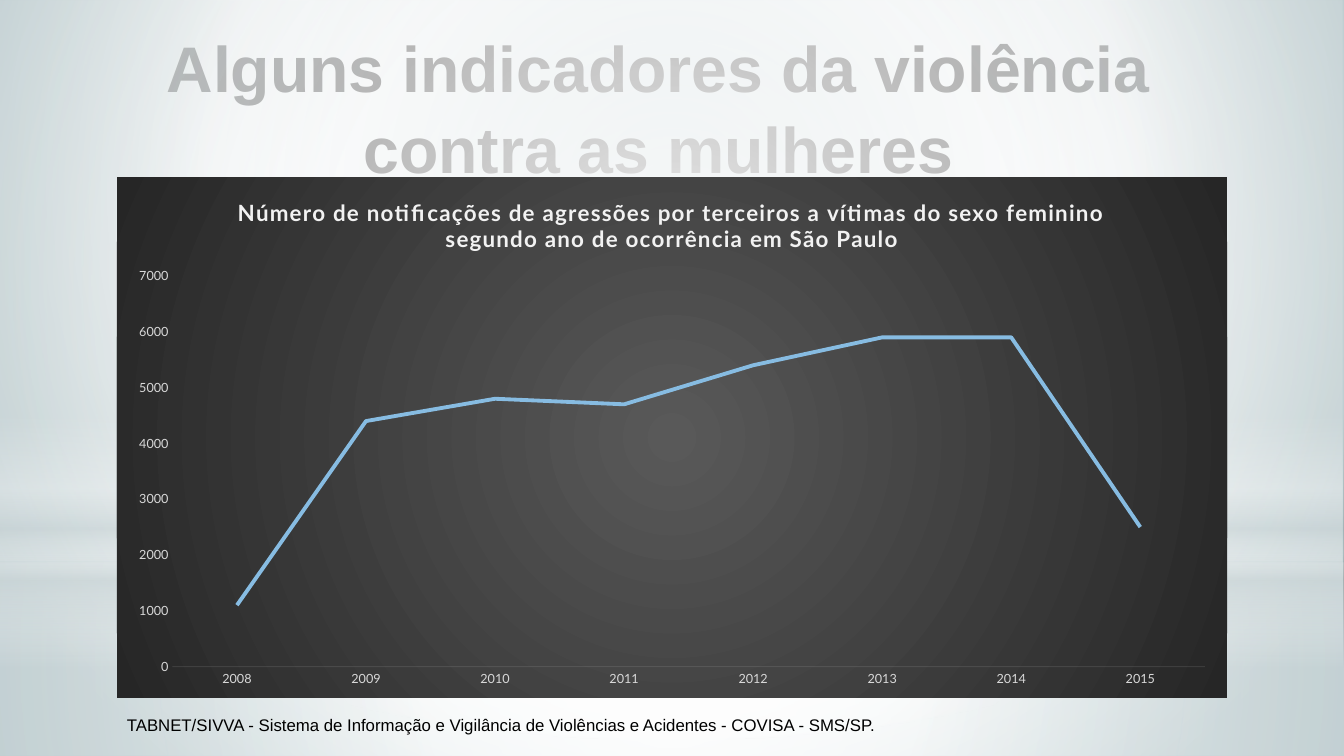
import pptx
import pptx.chart.data
import pptx.dml.color
import pptx.enum.chart
import pptx.enum.shapes
import pptx.enum.text
import pptx.oxml
import pptx.oxml.ns
import pptx.util
from pptx.util import Pt

HEADING = "Alguns indicadores da violência contra as mulheres"
CHART_HEADING = ("Número de notificações de agressões por terceiros a vítimas "
                 "do sexo feminino segundo ano de ocorrência em São Paulo")
CREDIT = ("TABNET/SIVVA - Sistema de Informação e Vigilância de Violências "
          "e Acidentes - COVISA - SMS/SP.")
NOTIFICATIONS = {"2008": 1100, "2009": 4400, "2010": 4800, "2011": 4700,
                 "2012": 5400, "2013": 5900, "2014": 5900, "2015": 2500}

THEME = {
    "heading": ("Arial", 46, "404040"),
    "chart_heading": ("Lato", 16, "F2F2F2"),
    "axis": ("Lato", 9, "D9D9D9"),
    "credit": ("Arial", 12, "000000"),
    "series": "87BCE2",
    "axis_line": "F2F2F2",
}

# Gradients: stops of (position %, colour, opacity %), then either a linear
# angle in degrees or the focus rectangle (left, top, right, bottom %).
CENTRE = (50, 50, 50, 50)
BACKDROP = ([(0, "C2D0D3", 100), (60, "FFFFFF", 100), (100, "9AB5BA", 100)],
            (20, 10, 20, 60))
PANEL = ([(0, "595959", 100), (100, "262626", 100)], CENTRE)

WIDTH, HEIGHT = 960, 540
RECT = pptx.enum.shapes.MSO_SHAPE.RECTANGLE
OVAL = pptx.enum.shapes.MSO_SHAPE.OVAL
# Preset, top, height, stops, direction; every glow spans the slide.
GLOWS = [
    (RECT, 402, 138,
     [(0, "FFFFFF", 91), (37, "FFFFFF", 76), (100, "CDD7D9", 79)], CENTRE),
    (RECT, 0, 402,
     [(0, "FFFFFF", 89), (48, "FFFFFF", 62), (100, "CDD7D9", 79)], CENTRE),
    (RECT, 296.5, 180,
     [(0, "FFFFFF", 0), (29, "FFFFFF", 30), (45, "CDD7D9", 40),
      (55, "FFFFFF", 26), (65, "CDD7D9", 60), (100, "FFFFFF", 0)], 90),
    (OVAL, 126, 402, [(0, "FFFFFF", 100), (56, "FFFFFF", 0)], CENTRE),
]

HEADING_BOX = (75, 13.7, 790.5, 55.5)
CHART_BOX = (83.5, 126.5, 793, 372)
CREDIT_BOX = (83.5, 507, 838, 44)
PLOT_SHARE = {"x": 0.05, "y": 0.19, "w": 0.93, "h": 0.75}


def points(box):
    return [Pt(length) for length in box]


def rgb(colour):
    return pptx.dml.color.RGBColor.from_string(colour)


def style_font(font, role, bold=False):
    font.name, size, colour = THEME[role]
    font.size = Pt(size)
    font.bold = bold
    font.color.rgb = rgb(colour)


def gradient(stops, direction):
    stop_xml = "".join(
        f'<a:gs pos="{position * 1000}"><a:srgbClr val="{colour}">'
        f'<a:alpha val="{opacity * 1000}"/></a:srgbClr></a:gs>'
        for position, colour, opacity in stops)
    if isinstance(direction, tuple):
        sides = " ".join(f'{side}="{share * 1000}"'
                         for side, share in zip("ltrb", direction))
        shade = f'<a:path path="circle"><a:fillToRect {sides}/></a:path>'
    else:
        shade = f'<a:lin ang="{direction * 60000}" scaled="0"/>'
    return pptx.oxml.parse_xml(
        f'<a:gradFill {pptx.oxml.ns.nsdecls("a")} rotWithShape="1">'
        f'<a:gsLst>{stop_xml}</a:gsLst>{shade}</a:gradFill>')


def set_gradient(fill, owner, stops, direction):
    """Put a gradient where the plain fill of the owner element sits."""
    fill.background()
    plain = owner.find(".//" + pptx.oxml.ns.qn("a:noFill"))
    plain.getparent().replace(plain, gradient(stops, direction))


def add_glows(slide):
    set_gradient(slide.background.fill, slide.element, *BACKDROP)
    for preset, top, height, stops, direction in GLOWS:
        glow = slide.shapes.add_shape(
            preset, *points((0, top, WIDTH, height)))
        glow.shadow.inherit = False
        set_gradient(glow.fill, glow.element, stops, direction)
        glow.line.fill.background()


def add_heading(slide):
    heading = slide.shapes.title
    heading.left, heading.top, heading.width, heading.height = points(HEADING_BOX)
    frame = heading.text_frame
    frame.text = HEADING
    frame.word_wrap = True
    frame.auto_size = pptx.enum.text.MSO_AUTO_SIZE.NONE
    frame.vertical_anchor = pptx.enum.text.MSO_ANCHOR.TOP
    paragraph = frame.paragraphs[0]
    paragraph.alignment = pptx.enum.text.PP_ALIGN.CENTER
    paragraph.line_spacing = 1.05
    style_font(paragraph.font, "heading", bold=True)


def add_notifications_chart(slide):
    data = pptx.chart.data.CategoryChartData()
    data.categories = list(NOTIFICATIONS)
    data.add_series("Series 1", list(NOTIFICATIONS.values()))
    chart = slide.shapes.add_chart(
        pptx.enum.chart.XL_CHART_TYPE.LINE, *points(CHART_BOX), data).chart
    chart.has_legend = False
    style_font(chart.font, "axis")

    title = chart.chart_title
    title.text_frame.text = CHART_HEADING
    title.include_in_layout = False
    paragraph = title.text_frame.paragraphs[0]
    style_font(paragraph.font, "chart_heading", bold=True)
    paragraph.font._element.set("spc", "100")

    for axis in (chart.category_axis, chart.value_axis):
        axis.has_major_gridlines = False
        axis.major_tick_mark = pptx.enum.chart.XL_TICK_MARK.NONE
        axis.minor_tick_mark = pptx.enum.chart.XL_TICK_MARK.NONE
        style_font(axis.tick_labels.font, "axis")
    chart.value_axis.minimum_scale = 0
    chart.value_axis.maximum_scale = 7000
    chart.value_axis.major_unit = 1000
    chart.value_axis.format.line.fill.background()
    base = chart.category_axis.format.line
    base.width = Pt(0.75)
    base.color.rgb = rgb(THEME["axis_line"])
    base_colour = chart.category_axis.format.line._ln.find(
        ".//" + pptx.oxml.ns.qn("a:srgbClr"))
    base_colour.append(pptx.oxml.parse_xml(
        f'<a:alpha {pptx.oxml.ns.nsdecls("a")} val="10000"/>'))

    chart.plots[0].vary_by_categories = False
    series = chart.plots[0].series[0]
    series.smooth = False
    series.marker.style = pptx.enum.chart.XL_MARKER_STYLE.NONE
    series.format.line.width = Pt(2.75)
    series.format.line.color.rgb = rgb(THEME["series"])

    namespaces = pptx.oxml.ns.nsdecls("c", "a")
    panel = pptx.oxml.parse_xml(
        f"<c:spPr {namespaces}><a:ln><a:noFill/></a:ln></c:spPr>")
    panel.insert(0, gradient(*PANEL))
    chart_body = chart.element.find(pptx.oxml.ns.qn("c:chart"))
    chart_body.addnext(panel)

    shares = "".join(f'<c:{key} val="{share}"/>'
                     for key, share in PLOT_SHARE.items())
    layout = pptx.oxml.parse_xml(
        f'<c:layout {namespaces}><c:manualLayout>'
        '<c:layoutTarget val="inner"/><c:xMode val="edge"/>'
        f'<c:yMode val="edge"/>{shares}</c:manualLayout></c:layout>')
    plot_area = chart_body.find(pptx.oxml.ns.qn("c:plotArea"))
    for automatic in plot_area.findall(pptx.oxml.ns.qn("c:layout")):
        plot_area.remove(automatic)
    plot_area.insert(0, layout)


def add_credit(slide):
    frame = slide.shapes.add_textbox(*points(CREDIT_BOX)).text_frame
    frame.text = CREDIT
    frame.word_wrap = True
    frame.auto_size = pptx.enum.text.MSO_AUTO_SIZE.SHAPE_TO_FIT_TEXT
    style_font(frame.paragraphs[0].font, "credit")


def main():
    deck = pptx.Presentation()
    deck.slide_width, deck.slide_height = Pt(WIDTH), Pt(HEIGHT)
    slide = deck.slides.add_slide(deck.slide_layouts.get_by_name("Title Only"))
    add_glows(slide)
    add_notifications_chart(slide)
    add_credit(slide)
    add_heading(slide)
    deck.save("out.pptx")


if __name__ == "__main__":
    main()
